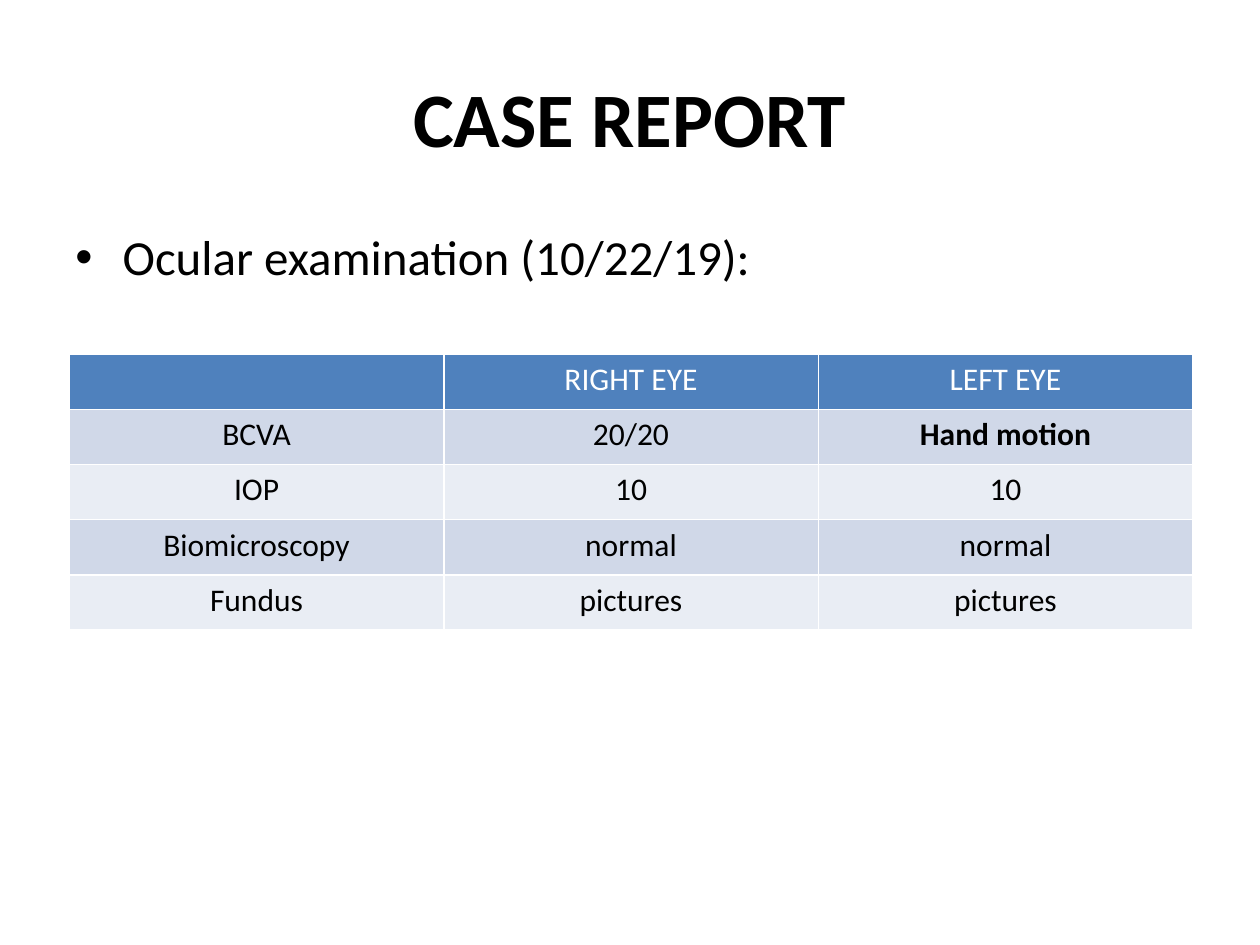
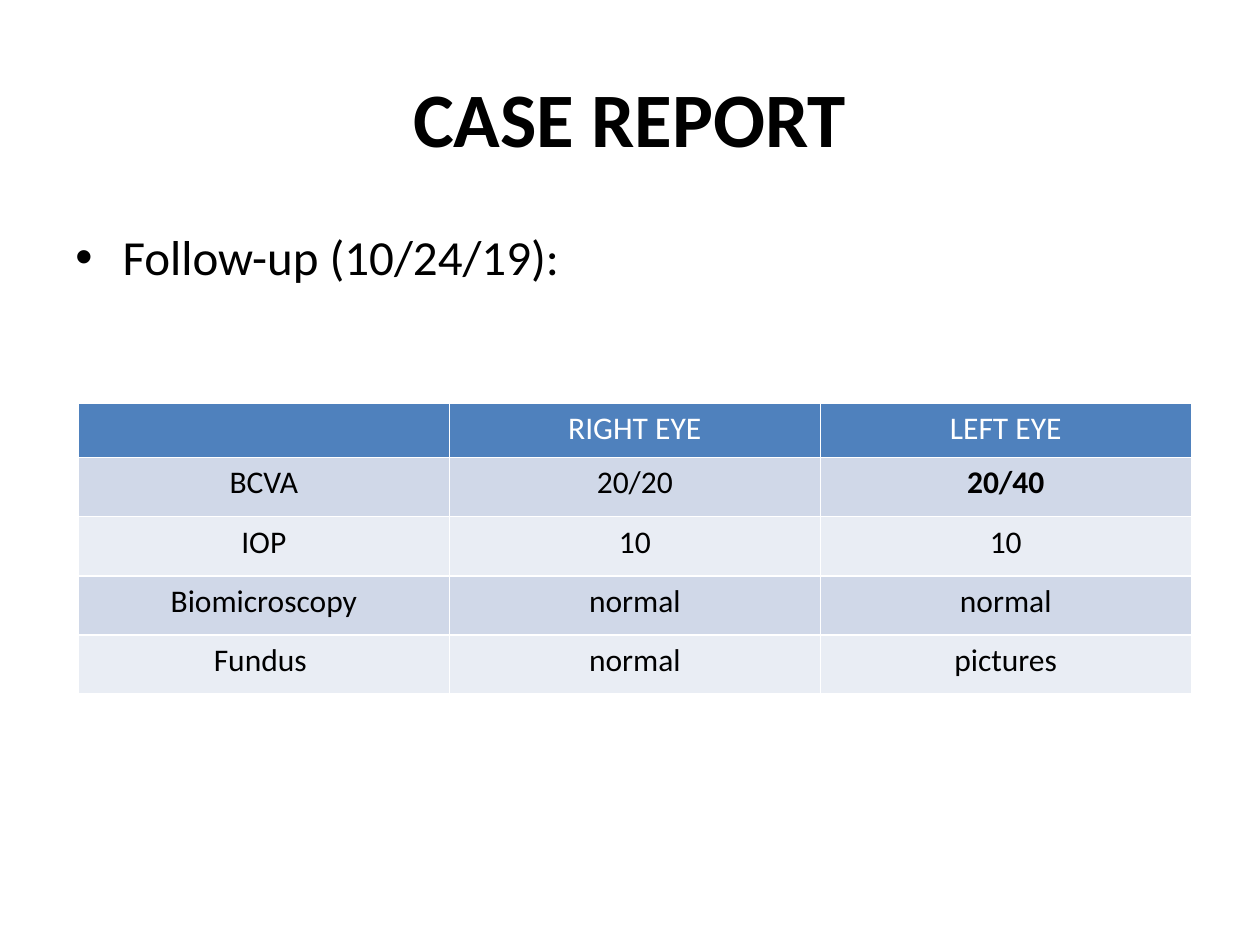
from lxml import etree
from pptx import Presentation
from pptx.dml.color import RGBColor
from pptx.enum import text
from pptx.oxml import ns
from pptx.util import Pt

COLOURS = {"ink": "000000", "paper": "FFFFFF", "header": "4F81BD",
           "band_dark": "D0D8E8", "band_light": "E9EDF4"}
FONT = "Calibri"
HEADINGS = ["", "RIGHT EYE", "LEFT EYE"]


def add_child(parent, tag, **attributes):
    return etree.SubElement(parent, ns.qn(tag), attributes)


class CaseDeck:
    """Holds the shared style and the current slide."""

    def __init__(self):
        self.deck = Presentation()
        self.deck.slide_width, self.deck.slide_height = Pt(720), Pt(540)
        self.slide = None

    def new_slide(self):
        self.slide = self.deck.slides.add_slide(self.deck.slide_layouts[6])

    def format_text(self, para, size, colour="ink", bold=False):
        for span in para.runs:
            span.font.name, span.font.size, span.font.bold = FONT, Pt(size), bold
            span.font.color.rgb = RGBColor.from_string(COLOURS[colour])

    def text_box(self, words, top, height, size, bold=False):
        box = self.slide.shapes.add_textbox(Pt(36), Pt(top), Pt(648), Pt(height))
        box.text_frame.word_wrap = True
        para = box.text_frame.paragraphs[0]
        para.text = words
        self.format_text(para, size, bold=bold)
        return box.text_frame, para

    def title(self, words):
        frame, para = self.text_box(words, 21.6, 90, 44, bold=True)
        frame.vertical_anchor = text.MSO_ANCHOR.MIDDLE
        para.alignment = text.PP_ALIGN.CENTER

    def bullet(self, words):
        frame, para = self.text_box(words, 126, 48, 28)
        para.alignment = text.PP_ALIGN.JUSTIFY
        properties = para._p.get_or_add_pPr()
        properties.set("marL", str(Pt(27)))
        properties.set("indent", str(-Pt(27)))
        add_child(add_child(properties, "a:spcBef"), "a:spcPct", val="20000")
        add_child(properties, "a:buFont", typeface="Arial")
        add_child(properties, "a:buChar", char="•")

    def cell_borders(self, cell):
        properties = cell._tc.get_or_add_tcPr()
        for side in ("a:lnL", "a:lnR", "a:lnT", "a:lnB"):
            line = add_child(properties, side, w=str(Pt(1)))
            add_child(add_child(line, "a:solidFill"), "a:srgbClr", val=COLOURS["paper"])

    def exam_table(self, findings, left, top, column_width, header_height, row_height):
        rows = [HEADINGS] + findings
        heights = [header_height] + [row_height] * len(findings)
        columns = len(HEADINGS)
        table = self.slide.shapes.add_table(
            len(rows), columns, Pt(left), Pt(top),
            Pt(column_width * columns), Pt(sum(heights))).table
        for column in table.columns:
            column.width = Pt(column_width)
        for r, (row, height) in enumerate(zip(rows, heights)):
            table.rows[r].height = Pt(height)
            fill = "header" if r == 0 else ("band_light", "band_dark")[r % 2]
            for c, words in enumerate(row):
                cell = table.cell(r, c)
                self.cell_borders(cell)
                cell.fill.solid()
                cell.fill.fore_color.rgb = RGBColor.from_string(COLOURS[fill])
                para = cell.text_frame.paragraphs[0]
                para.text = words
                para.alignment = text.PP_ALIGN.CENTER
                # The left eye's acuity is the key finding
                self.format_text(para, 18, "ink" if r else "paper", bold=(r, c) == (1, 2))


def findings(left_acuity, fundus):
    return [["BCVA", "20/20", left_acuity], ["IOP", "10", "10"],
            ["Biomicroscopy", "normal", "normal"], fundus]


def main():
    case = CaseDeck()

    # First examination
    case.new_slide()
    case.title("CASE REPORT")
    case.bullet("Ocular examination (10/22/19):")
    case.exam_table(findings("Hand motion", ["Fundus", "pictures", "pictures"]),
                    left=39.6, top=202.5, column_width=214,
                    header_height=31.5, row_height=31.5)

    # Follow-up
    case.new_slide()
    case.title("CASE REPORT")
    case.bullet("Follow-up (10/24/19):")
    case.exam_table(findings("20/40", ["Fundus ", "normal", "pictures"]),
                    left=44.8, top=230.5, column_width=212,
                    header_height=31, row_height=33.8)

    case.deck.save("out.pptx")


if __name__ == "__main__":
    main()
